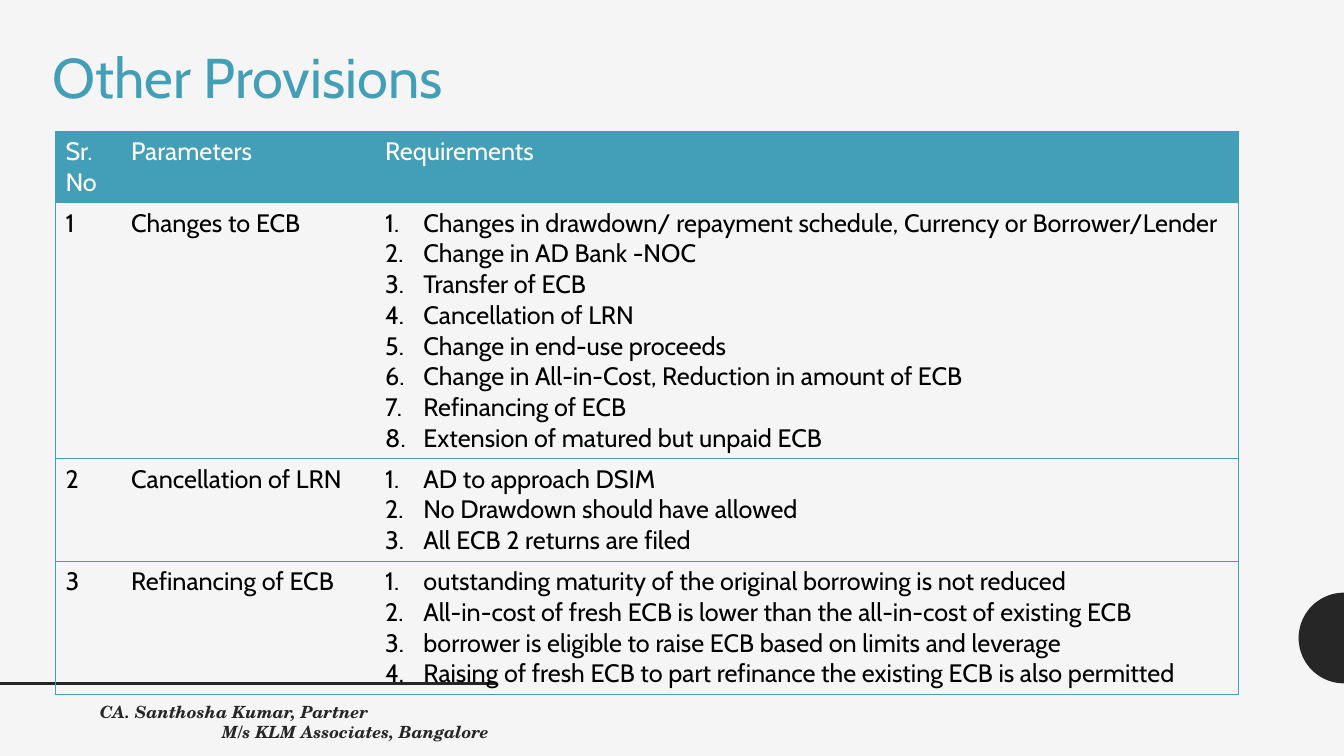
from math import cos, pi, sin

from lxml.etree import SubElement
from pptx import Presentation
from pptx.dml.color import RGBColor
from pptx.enum.shapes import MSO_CONNECTOR
from pptx.enum.text import MSO_ANCHOR, MSO_AUTO_SIZE, PP_ALIGN
from pptx.oxml.ns import qn
from pptx.util import Inches, Pt

COLORS = {"paper": "F5F5F5", "accent": "439EB7", "dark": "262626",
          "body": "000000", "header": "FFFFFF"}
FORMATS = {
    "title": {"name": "Cabin", "size": Pt(40), "bold": False},
    "cell": {"name": "Cabin", "size": Pt(18), "bold": False},
    "credit": {"name": "TeX Gyre Schola", "size": Pt(12), "bold": True, "italic": True},
}
HEADINGS = ["Sr. No", "Parameters", "Requirements"]
PROVISIONS = [
    ("Changes to ECB", [
        "Changes in drawdown/ repayment schedule, Currency or Borrower/Lender",
        "Change in AD Bank -NOC",
        "Transfer of ECB",
        "Cancellation of LRN",
        "Change in end-use proceeds",
        "Change in All-in-Cost, Reduction in amount of ECB",
        "Refinancing of ECB",
        "Extension of matured but unpaid ECB",
    ]),
    ("Cancellation of LRN", [
        "AD to approach DSIM",
        "No Drawdown should have allowed",
        "All ECB 2 returns are filed",
    ]),
    ("Refinancing of ECB", [
        "outstanding maturity of the original borrowing is not reduced",
        "All-in-cost of fresh ECB is lower than the all-in-cost of existing ECB",
        "borrower is eligible to raise ECB based on limits and leverage",
        "Raising of fresh ECB to part refinance the existing ECB is also permitted",
    ]),
]


class SlideBuilder:
    """Draws styled elements on a grid of 100 columns by 100 rows."""

    def __init__(self, deck):
        self.column = deck.slide_width / 100
        self.row = deck.slide_height / 100
        self.slide = deck.slides.add_slide(deck.slide_layouts[5])
        self.paint(self.slide.background.fill, "paper")

    def paint(self, fill, color):
        fill.solid()
        fill.fore_color.rgb = RGBColor.from_string(COLORS[color])

    def box(self, left, top, width, height):
        return (round(left * self.column), round(top * self.row),
                round(width * self.column), round(height * self.row))

    def add_text(self, paragraph, text, style, color):
        run = paragraph.add_run()
        run.text = text
        for attribute, value in FORMATS[style].items():
            setattr(run.font, attribute, value)
        run.font.color.rgb = RGBColor.from_string(COLORS[color])

    def title(self, text, *area):
        heading = self.slide.shapes.title
        heading.left, heading.top, heading.width, heading.height = self.box(*area)
        frame = heading.text_frame
        settings = {"word_wrap": False, "auto_size": MSO_AUTO_SIZE.NONE,
                    "vertical_anchor": MSO_ANCHOR.MIDDLE}
        for attribute, value in settings.items():
            setattr(frame, attribute, value)
        frame.paragraphs[0].alignment = PP_ALIGN.LEFT
        self.add_text(frame.paragraphs[0], text, "title", "accent")

    def half_disc(self, center_row, radius_rows, steps=40):
        radius = radius_rows * self.row
        angles = [pi * step / steps for step in range(steps + 1)]
        points = [(100 * self.column - radius * sin(angle),
                   center_row * self.row - radius * cos(angle)) for angle in angles]
        outline = self.slide.shapes.build_freeform(*map(round, points[0]))
        outline.add_line_segments([tuple(map(round, point)) for point in points[1:]])
        disc = outline.convert_to_shape()
        disc.shadow.inherit = False
        self.paint(disc.fill, "dark")
        disc.line.fill.background()

    def rule(self, end_column, row):
        end_x, y, _, _ = self.box(end_column, row, 0, 0)
        baseline = self.slide.shapes.add_connector(MSO_CONNECTOR.STRAIGHT, 0, y, end_x, y)
        baseline.line.color.rgb = RGBColor.from_string(COLORS["dark"])
        baseline.line.width = Pt(2)
        SubElement(baseline._element.spPr, qn("a:effectLst"))

    def borders(self, cell, visible):
        properties = cell._tc.get_or_add_tcPr()
        for side in "LRTB":
            edge = SubElement(properties, qn(f"a:ln{side}"), w=str(Pt(0.5)))
            if side in visible:
                fill = SubElement(edge, qn("a:solidFill"))
                SubElement(fill, qn("a:srgbClr"), val=COLORS["accent"])
            else:
                SubElement(edge, qn("a:noFill"))

    def fill_cell(self, cell, lines, color, numbered):
        frame = cell.text_frame
        for index, line in enumerate(lines):
            paragraph = frame.add_paragraph() if index else frame.paragraphs[0]
            if numbered:
                properties = paragraph._p.get_or_add_pPr()
                properties.set("marL", str(Inches(0.38)))
                properties.set("indent", str(-Inches(0.38)))
                SubElement(properties, qn("a:buAutoNum"), type="arabicPeriod")
            self.add_text(paragraph, line, "cell", color)

    def table(self, left, top, widths, heights, headings, provisions):
        area = self.box(left, top, sum(widths), sum(heights))
        grid = self.slide.shapes.add_table(len(heights), len(widths), *area).table
        grid.horz_banding = False
        for column, width in zip(grid.columns, widths):
            column.width = round(width * self.column)
        for row, height in zip(grid.rows, heights):
            row.height = round(height * self.row)
        records = [[[heading] for heading in headings]]
        records += [[[str(number)], [parameter], requirements]
                    for number, (parameter, requirements) in enumerate(provisions, 1)]
        for row_index, record in enumerate(records):
            for column_index, lines in enumerate(record):
                cell = grid.cell(row_index, column_index)
                self.borders(cell, ("LTB", "TB", "RTB")[column_index])
                if row_index:
                    cell.fill.background()
                else:
                    self.paint(cell.fill, "accent")
                self.fill_cell(cell, lines, "body" if row_index else "header",
                               row_index > 0 and column_index == 2)

    def credit(self, partner, firm, *area):
        frame = self.slide.shapes.add_textbox(*self.box(*area)).text_frame
        settings = {"word_wrap": True, "margin_left": Inches(0.16),
                    "margin_right": Inches(0.15)}
        for attribute, value in settings.items():
            setattr(frame, attribute, value)
        frame.paragraphs[0].alignment = PP_ALIGN.LEFT
        self.add_text(frame.paragraphs[0], partner, "credit", "dark")
        firm_line = frame.add_paragraph()
        firm_line.alignment = PP_ALIGN.RIGHT
        self.add_text(firm_line, firm, "credit", "dark")


def main():
    deck = Presentation()
    deck.slide_width, deck.slide_height = Inches(13.33), Inches(7.5)
    builder = SlideBuilder(deck)
    builder.half_disc(84.4, 6)
    builder.rule(36.91, 90.4)
    builder.title("Other Provisions", 3.15, 4.93, 31.28, 10.27)
    builder.table(4.13, 17.33, [4.88, 18.9, 64.22], [9.33, 33.2, 13.33, 17.33],
                  HEADINGS, PROVISIONS)
    builder.credit("CA. Santhosha Kumar, Partner", "M/s KLM Associates, Bangalore",
                   6.23, 92.13, 31.28, 5.33)
    deck.save("out.pptx")


if __name__ == "__main__":
    main()
